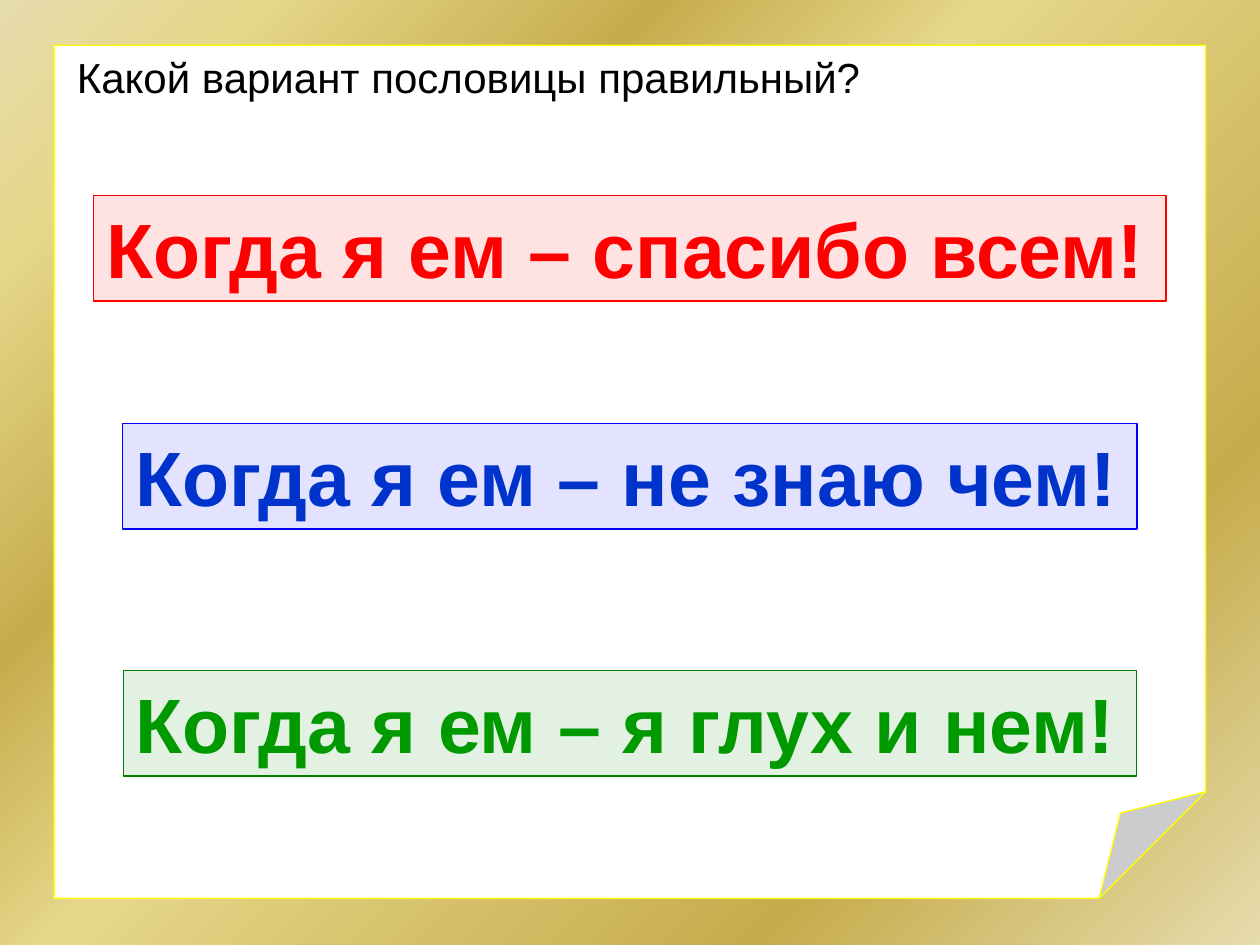
from lxml import etree
from pptx import Presentation
from pptx.dml.color import RGBColor
from pptx.enum.shapes import MSO_SHAPE
from pptx.enum.text import MSO_ANCHOR, MSO_AUTO_SIZE, PP_ALIGN
from pptx.oxml.ns import qn
from pptx.util import Inches, Pt

RECT, SHEET = MSO_SHAPE.RECTANGLE, MSO_SHAPE.FOLDED_CORNER
TOP, LEFT, GROW = MSO_ANCHOR.TOP, PP_ALIGN.LEFT, MSO_AUTO_SIZE.SHAPE_TO_FIT_TEXT

TITLE = "Какой вариант пословицы правильный?"
# text, top, width, frame colour, text colour
ANSWERS = [
    ("Когда я ем – спасибо всем!", 1.55, 8.51, "FF0000", "FF0000"),
    ("Когда я ем – не знаю чем!", 3.36, 8.05, "0000FF", "0033CC"),
    ("Когда я ем – я глух и нем!", 5.32, 8.04, "008000", "009900"),
]
THEME = {
    "font": "Arial", "title": 24, "answer": 44, "line": 0.75, "tint": 11,
    "ink": "000000", "paper": "FFFFFF", "edge": "FFFF00",
    "gold": [(0, "E6DCAC"), (12, "E6D78A"), (30, "C7AC4C"),
             (45, "E6D78A"), (77, "C7AC4C"), (100, "E6DCAC")],
}
WIDE, HIGH = 10, 7.5
MARGIN_X, MARGIN_Y = 0.43, 0.36
BOX_H = 0.84


def paint_back(slide):
    fill = slide.background.fill
    fill.gradient()
    fill.gradient_angle = 315
    stops = slide.element.find(".//" + qn("a:gsLst"))
    for stop in list(stops):
        stops.remove(stop)
    for share, color in THEME["gold"]:
        stop = etree.SubElement(stops, qn("a:gs"), pos=str(share * 1000))
        etree.SubElement(stop, qn("a:srgbClr"), val=color)


def add_box(slide, kind, place, fill, line):
    box = slide.shapes.add_shape(kind, *map(Inches, place))
    box.shadow.inherit = False
    box.fill.solid()
    box.fill.fore_color.rgb = RGBColor.from_string(fill)
    box.line.color.rgb = RGBColor.from_string(line)
    box.line.width = Pt(THEME["line"])
    return box


def write(shape, text, size, color, bold=False):
    frame = shape.text_frame
    frame.text = text
    for name, value in {"word_wrap": False, "auto_size": GROW,
                        "vertical_anchor": TOP}.items():
        setattr(frame, name, value)
    para = frame.paragraphs[0]
    para.alignment = LEFT
    font = para.runs[0].font
    for name, value in {"name": THEME["font"], "size": Pt(size),
                        "bold": bold}.items():
        setattr(font, name, value)
    font.color.rgb = RGBColor.from_string(color)


def main():
    deck = Presentation()
    deck.slide_width, deck.slide_height = Inches(WIDE), Inches(HIGH)
    slide = deck.slides.add_slide(deck.slide_layouts[5])
    paint_back(slide)

    sheet = add_box(slide, SHEET, (MARGIN_X, MARGIN_Y, WIDE - 2 * MARGIN_X, 6.77),
                    THEME["paper"], THEME["edge"])
    fold = sheet.element.find(".//" + qn("a:avLst"))
    etree.SubElement(fold, qn("a:gd"), name="adj", fmla="val 12500")

    title = slide.shapes.title
    sheet.element.addnext(title.element)  # keeps the title above the sheet
    place = {"left": 0.51, "top": MARGIN_Y, "width": 6.42, "height": 0.5}
    for name, value in place.items():
        setattr(title, name, Inches(value))
    write(title, TITLE, THEME["title"], THEME["ink"])

    for text, top, width, frame, ink in ANSWERS:
        left = (WIDE - width) / 2
        box = add_box(slide, RECT, (left, top, width, BOX_H), frame, frame)
        tint = box.element.spPr.find(qn("a:solidFill"))[0]
        etree.SubElement(tint, qn("a:alpha"), val=str(THEME["tint"] * 1000))
        write(box, text, THEME["answer"], ink, bold=True)

    deck.save("out.pptx")


if __name__ == "__main__":
    main()
